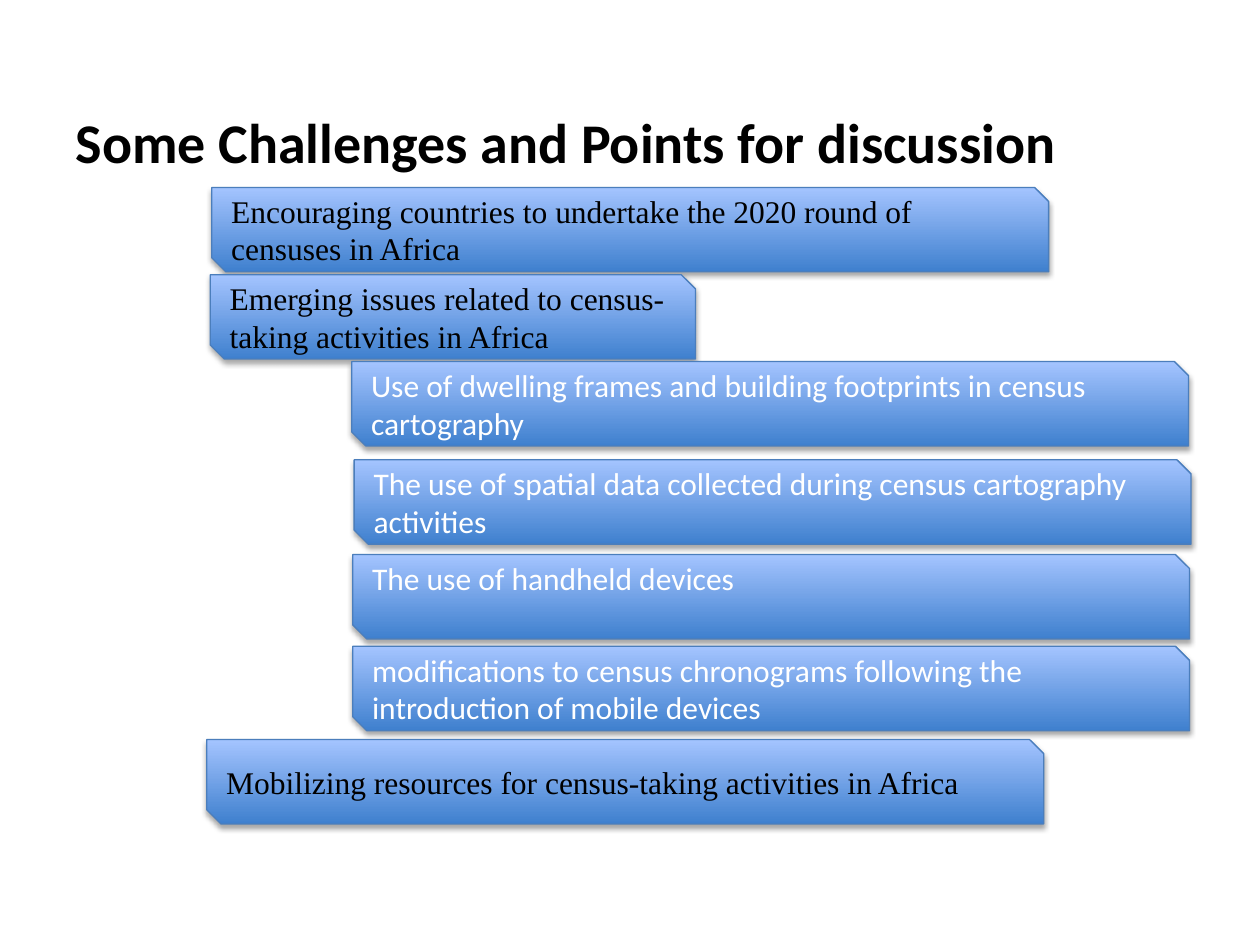
from lxml import etree
from pptx import Presentation
from pptx.dml.color import RGBColor
from pptx.enum.shapes import MSO_SHAPE
from pptx.enum.text import MSO_ANCHOR, MSO_AUTO_SIZE, PP_ALIGN
from pptx.oxml.ns import qn
from pptx.util import Cm, Pt

SNIPPED = MSO_SHAPE.SNIP_2_DIAG_RECTANGLE
TOP, MIDDLE = MSO_ANCHOR.TOP, MSO_ANCHOR.MIDDLE
LEFT = PP_ALIGN.LEFT
NO_AUTOFIT = MSO_AUTO_SIZE.NONE

COLORS = {
    "black": "000000",
    "white": "FFFFFF",
    "outline": "4B7EBC",
    "bar_bottom": "3F80CE",
    "bar_top": "A4C4FF",
}

# Content
TITLE = "Some Challenges and Points for discussion"
WIDE, NARROW = 16.87, 9.78
BAR_HEIGHT = 1.7
LINE_HEIGHT = 0.76
INSET = 0.13

# level, left, top, width (cm), text
POINTS = [
    ("main", 4.27, 3.78, WIDE, "Encouraging countries to undertake the 2020 round of censuses in Africa"),
    ("main", 4.24, 5.54, NARROW, "Emerging issues related to census-taking activities in Africa"),
    ("sub", 7.09, 7.29, WIDE, "Use of dwelling frames and building footprints in census cartography"),
    ("sub", 7.14, 9.27, WIDE, "The use of spatial data collected during census cartography activities"),
    ("raised", 7.11, 11.18, WIDE, "The use of handheld devices"),
    ("sub", 7.11, 13.03, WIDE, "modifications to census chronograms following the introduction of mobile devices"),
    ("main", 4.17, 14.91, WIDE, "Mobilizing resources for census-taking activities in Africa"),
]

TITLE_FONT = {"name": "Calibri", "size": Pt(32), "bold": True}
MAIN_FONT = {"name": "Times New Roman", "size": Pt(18)}
SUB_FONT = {"name": "Calibri", "size": Pt(18)}
# font, text colour, bottom inset (cm); a raised line sits in the upper half
LEVELS = {
    "main": (MAIN_FONT, "black", INSET),
    "sub": (SUB_FONT, "white", INSET),
    "raised": (SUB_FONT, "white", INSET + LINE_HEIGHT),
}


def rgb(name):
    return RGBColor.from_string(COLORS[name])


def write(shape, text, font, color, anchor):
    frame = shape.text_frame
    frame.word_wrap = True
    frame.auto_size = NO_AUTOFIT
    frame.vertical_anchor = anchor
    paragraph = frame.paragraphs[0]
    paragraph.text = text
    paragraph.alignment = LEFT
    for name, value in font.items():
        setattr(paragraph.font, name, value)
    paragraph.font.color.rgb = rgb(color)


def add_shadow(shape):
    shape.shadow.inherit = False
    effects = shape._element.spPr.find(qn("a:effectLst"))
    shadow = etree.SubElement(effects, qn("a:outerShdw"), blurRad=str(Pt(3.1)),
                              dist=str(Pt(1.8)), dir="5400000", rotWithShape="0")
    color = etree.SubElement(shadow, qn("a:srgbClr"), val=COLORS["black"])
    etree.SubElement(color, qn("a:alpha"), val="35000")


def add_bar(slide, level, left, top, width, text):
    font, color, bottom_inset = LEVELS[level]
    bar = slide.shapes.add_shape(SNIPPED, Cm(left), Cm(top), Cm(width), Cm(BAR_HEIGHT))
    bar.fill.gradient()
    bar.fill.gradient_angle = 90
    for stop, name in zip(bar.fill.gradient_stops, ("bar_bottom", "bar_top")):
        stop.color.rgb = rgb(name)
    bar.line.color.rgb = rgb("outline")
    bar.line.width = Pt(0.75)
    add_shadow(bar)
    write(bar, text, font, color, MIDDLE)
    bar.text_frame.margin_bottom = Cm(bottom_inset)


def main():
    presentation = Presentation()
    presentation.slide_width, presentation.slide_height = Cm(25.4), Cm(19.05)
    slide = presentation.slides.add_slide(presentation.slide_layouts[5])

    # Title
    title = slide.shapes.title
    title.left, title.top, title.width, title.height = Cm(1.27), Cm(2.03), Cm(22.86), Cm(1.7)
    write(title, TITLE, TITLE_FONT, "black", TOP)

    # Discussion points
    for point in POINTS:
        add_bar(slide, *point)

    presentation.save("out.pptx")


if __name__ == "__main__":
    main()
